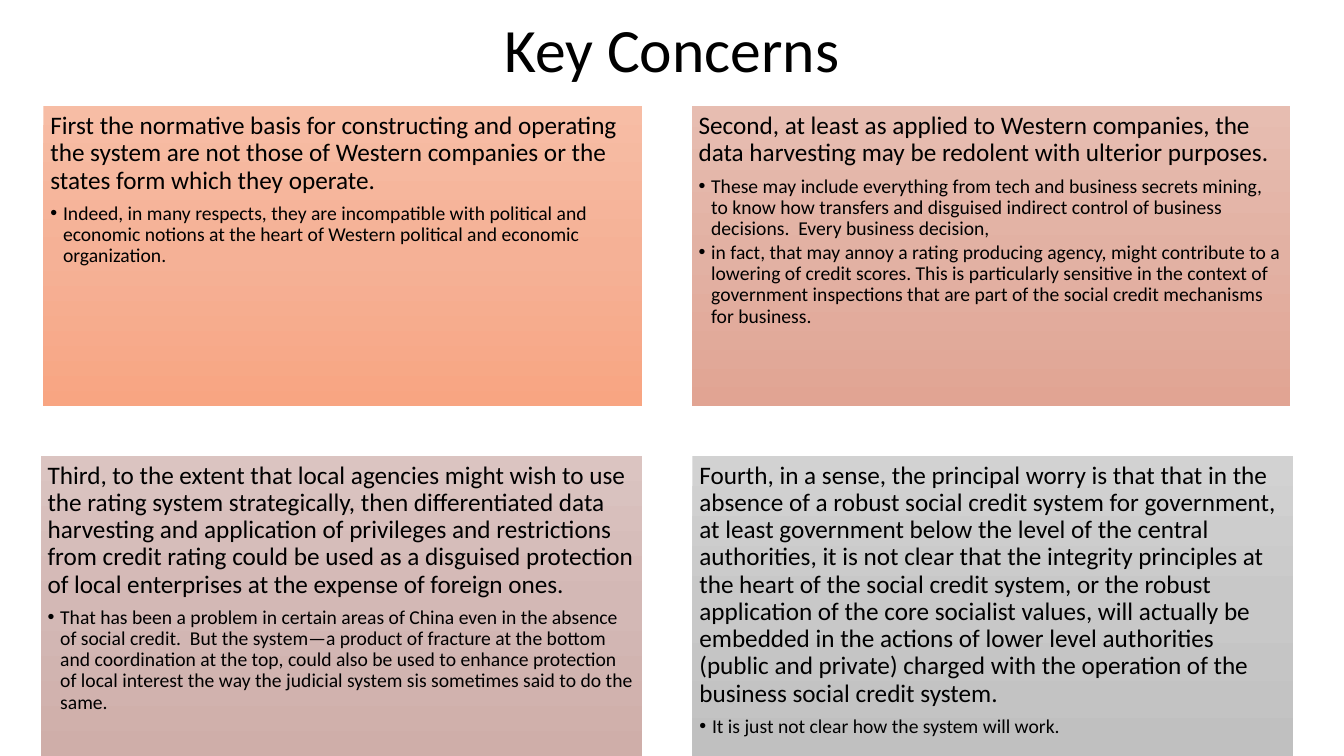
"""Build the Key Concerns slide: a title above four gradient text cards."""
from dataclasses import dataclass

from lxml.etree import SubElement
from pptx import Presentation
from pptx.dml.color import RGBColor
from pptx.enum.shapes import MSO_SHAPE as Preset
from pptx.enum.text import MSO_ANCHOR as Anchor, PP_ALIGN as Align
from pptx.oxml.ns import qn
from pptx.shapes.autoshape import Shape
from pptx.slide import Slide
from pptx.text.text import TextFrame
from pptx.util import Pt

FONT = "Calibri"
BLACK = RGBColor(0x00, 0x00, 0x00)
ORANGE = (RGBColor(0xF7, 0xBD, 0xA5), RGBColor(0xF5, 0xB1, 0x96), RGBColor(0xF8, 0xA5, 0x82))
CORAL = (RGBColor(0xE7, 0xBD, 0xB1), RGBColor(0xE2, 0xB1, 0xA3), RGBColor(0xE1, 0xA4, 0x93))
ROSE = (RGBColor(0xDB, 0xC4, 0xC1), RGBColor(0xD3, 0xB8, 0xB5), RGBColor(0xCF, 0xAE, 0xA9))
GREY = (RGBColor(0xD2, 0xD2, 0xD2), RGBColor(0xC8, 0xC8, 0xC8), RGBColor(0xC0, 0xC0, 0xC0))
TOP_ROW, BOTTOM_ROW, CARD_HEIGHT = 75.6, 325.4, 214.6
INSET, BULLET_INDENT = 5, 9


@dataclass(frozen=True)
class Card:
    """One concern with its supporting points."""
    left: float
    top: float
    width: float
    shades: tuple[RGBColor, ...]
    heading: str
    points: tuple[str, ...]


CARDS = (
    Card(31, TOP_ROW, 427.6, ORANGE,
         "First the normative basis for constructing and operating the system are not those of "
         "Western companies or the states form which they operate.",
         ("Indeed, in many respects, they are incompatible with political and economic notions "
          "at the heart of Western political and economic organization.",)),
    Card(494, TOP_ROW, 427.6, CORAL,
         "Second, at least as applied to Western companies, the data harvesting may be redolent "
         "with ulterior purposes.",
         ("These may include everything from tech and business secrets mining, to know how "
          "transfers and disguised indirect control of business decisions.  Every business "
          "decision,",
          "in fact, that may annoy a rating producing agency, might contribute to a lowering of "
          "credit scores. This is particularly sensitive in the context of government "
          "inspections that are part of the social credit mechanisms for business.")),
    Card(29, BOTTOM_ROW, 429.6, ROSE,
         "Third, to the extent that local agencies might wish to use the rating system "
         "strategically, then differentiated data harvesting and application of privileges and "
         "restrictions from credit rating could be used as a disguised protection of local "
         "enterprises at the expense of foreign ones.",
         ("That has been a problem in certain areas of China even in the absence of social "
          "credit.  But the system—a product of fracture at the bottom and coordination at the "
          "top, could also be used to enhance protection of local interest the way the judicial "
          "system sis sometimes said to do the same.",)),
    Card(494.6, BOTTOM_ROW, 429.2, GREY,
         "Fourth, in a sense, the principal worry is that that in the absence of a robust social "
         "credit system for government, at least government below the level of the central "
         "authorities, it is not clear that the integrity principles at the heart of the social "
         "credit system, or the robust application of the core socialist values, will actually "
         "be embedded in the actions of lower level authorities (public and private) charged "
         "with the operation of the business social credit system.",
         ("It is just not clear how the system will work.",)),
)


def write(frame: TextFrame, text: str, *, size: float, after: float = 0,
          align: Align = Align.LEFT, bullet: bool = False) -> None:
    """Write one formatted paragraph, filling the empty first one if there is one."""
    first = frame.paragraphs[0]
    para = frame.add_paragraph() if first.runs else first
    if bullet:
        para.level = 1
        properties = para._p.get_or_add_pPr()
        properties.set("marL", str(Pt(BULLET_INDENT)))
        properties.set("indent", str(-Pt(BULLET_INDENT)))
        SubElement(properties, qn("a:buFont"), typeface="Arial")
        SubElement(properties, qn("a:buChar"), char="•")
    para.alignment = align
    para.line_spacing = 0.9
    para.space_before = Pt(0)
    para.space_after = Pt(after)
    span = para.add_run()
    span.text = text
    span.font.name = FONT
    span.font.size = Pt(size)
    span.font.color.rgb = BLACK


def shade(box: Shape, shades: tuple[RGBColor, ...]) -> None:
    """Fill a box from top to bottom with evenly spaced shades."""
    box.fill.gradient()
    box.fill.gradient_angle = 270
    stops = box._element.spPr.find(qn("a:gradFill")).find(qn("a:gsLst"))
    for stop in list(stops):
        stops.remove(stop)
    for index, colour in enumerate(shades):
        position = index * 100000 // (len(shades) - 1)
        stop = SubElement(stops, qn("a:gs"), pos=str(position))
        SubElement(stop, qn("a:srgbClr"), val=str(colour))


def add_title(page: Slide, text: str) -> None:
    """Add the centred slide title."""
    box = page.shapes.add_textbox(Pt(66), Pt(0), Pt(828), Pt(TOP_ROW))
    frame = box.text_frame
    frame.word_wrap = True
    frame.vertical_anchor = Anchor.MIDDLE
    write(frame, text, size=44, align=Align.CENTER)


def add_card(page: Slide, card: Card) -> None:
    """Add one shaded card with its heading and bullets."""
    box = page.shapes.add_shape(Preset.RECTANGLE, Pt(card.left), Pt(card.top),
                                Pt(card.width), Pt(CARD_HEIGHT))
    box.shadow.inherit = False
    box.line.fill.background()
    shade(box, card.shades)
    frame = box.text_frame
    frame.word_wrap = True
    frame.vertical_anchor = Anchor.TOP
    frame.margin_left = frame.margin_right = Pt(INSET)
    frame.margin_top = frame.margin_bottom = Pt(INSET)
    write(frame, card.heading, size=18, after=6.3)
    for point in card.points:
        write(frame, point, size=14, after=2.1, bullet=True)


def main() -> None:
    """Build and save the deck."""
    deck = Presentation()
    deck.slide_width, deck.slide_height = Pt(960), Pt(540)
    page = deck.slides.add_slide(deck.slide_layouts[6])
    add_title(page, "Key Concerns")
    for card in CARDS:
        add_card(page, card)
    deck.save("out.pptx")


if __name__ == "__main__":
    main()
